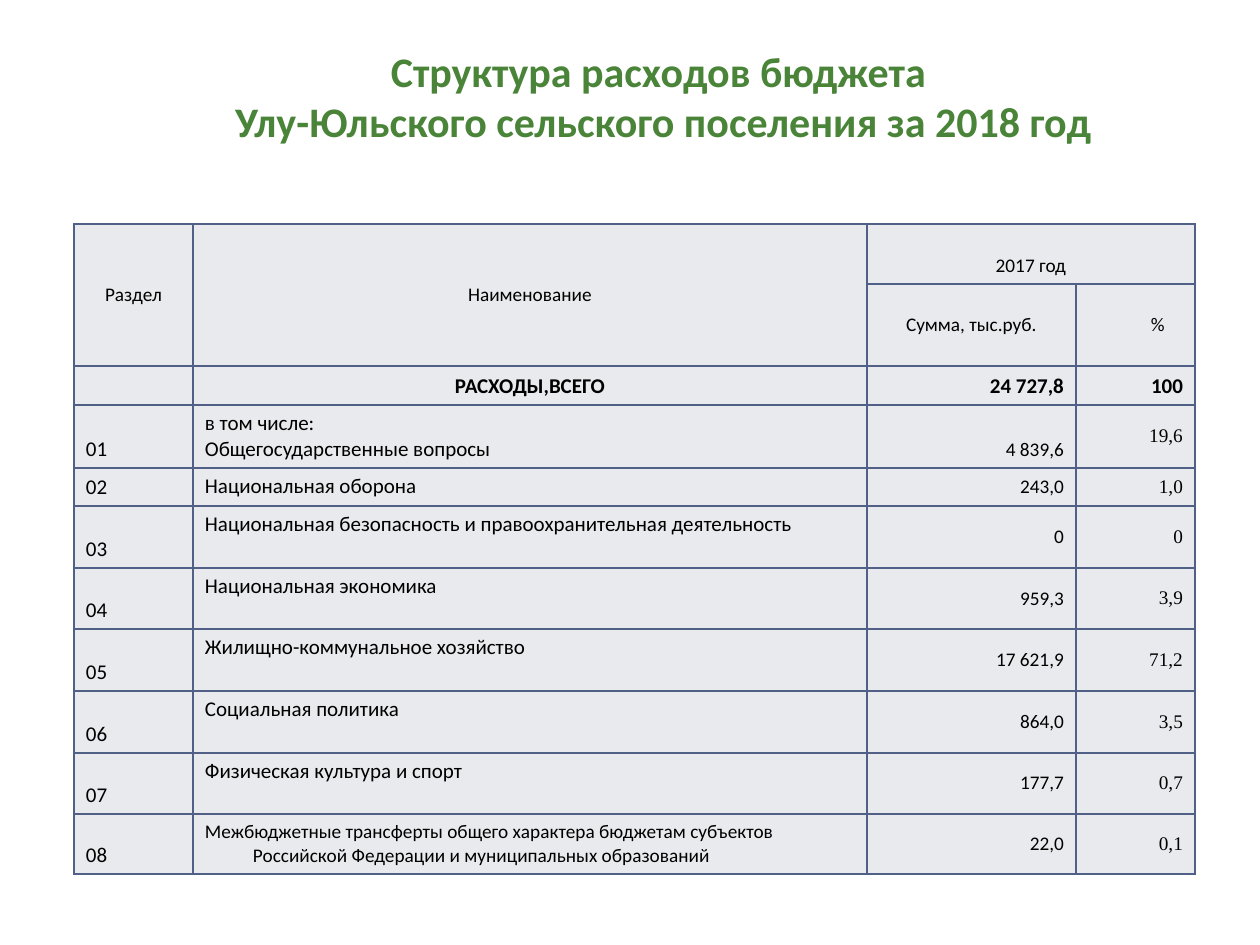
import pptx
import pptx.util
import pptx.dml.color
import pptx.enum.text
import pptx.oxml.ns
from lxml import etree

PX = 914400 // 126
GREEN = pptx.dml.color.RGBColor(0x4A, 0x84, 0x39)
BLACK = pptx.dml.color.RGBColor(0x00, 0x00, 0x00)
CELL_FILL = pptx.dml.color.RGBColor(0xE9, 0xEA, 0xED)
BORDER = pptx.dml.color.RGBColor(0x51, 0x60, 0x86)
SANS, SERIF = "Calibri", "Times New Roman"
INDENT = 48

qn = pptx.oxml.ns.qn
LEFT, CENTER, RIGHT = (pptx.enum.text.PP_ALIGN.LEFT, pptx.enum.text.PP_ALIGN.CENTER,
                       pptx.enum.text.PP_ALIGN.RIGHT)
TOP, MIDDLE, BOTTOM = (pptx.enum.text.MSO_ANCHOR.TOP, pptx.enum.text.MSO_ANCHOR.MIDDLE,
                       pptx.enum.text.MSO_ANCHOR.BOTTOM)


def style_cell(cell):
    """Fill the cell and draw its four borders."""
    cell.margin_left = cell.margin_right = 12 * PX
    cell.margin_top = cell.margin_bottom = 6 * PX
    properties = cell._tc.get_or_add_tcPr()
    for side in ("a:lnL", "a:lnR", "a:lnT", "a:lnB"):
        line = etree.SubElement(properties, qn(side), w=str(pptx.util.Pt(1)))
        solid = etree.SubElement(line, qn("a:solidFill"))
        etree.SubElement(solid, qn("a:srgbClr"), val=str(BORDER))
    cell.fill.solid()
    cell.fill.fore_color.rgb = CELL_FILL


def write_cell(cell, lines, align, anchor, size=11, font=SANS, bold=False, left=INDENT):
    """Write each line as a paragraph with a hanging indent."""
    cell.vertical_anchor = anchor
    for index, words in enumerate(lines):
        frame = cell.text_frame
        paragraph = frame.paragraphs[0] if index == 0 else frame.add_paragraph()
        paragraph.alignment = align
        indents = paragraph._p.get_or_add_pPr()
        indents.set("marL", str(left * PX))
        indents.set("indent", str(-INDENT * PX))
        run = paragraph.add_run()
        run.text = words
        run.font.name = font
        run.font.size = pptx.util.Pt(size)
        run.font.bold = bold
        run.font.color.rgb = BLACK


deck = pptx.Presentation()
deck.slide_width, deck.slide_height = 1260 * PX, 945 * PX
slide = deck.slides.add_slide(deck.slide_layouts[5])

# Title
title = slide.shapes.title
title.left, title.top, title.width, title.height = 123 * PX, 35 * PX, 1071 * PX, 157 * PX
title.text_frame.word_wrap = True
title.text_frame.vertical_anchor = TOP
title.text_frame.margin_top = 10 * PX
heading = title.text_frame.paragraphs[0]
heading.alignment = CENTER
for index, words in enumerate(["Структура расходов бюджета",
                               " Улу-Юльского сельского поселения за 2018 год"]):
    if index:
        heading.add_line_break()
    run = heading.add_run()
    run.text = words
    run.font.name = SANS
    run.font.size = pptx.util.Pt(24)
    run.font.bold = True
    run.font.color.rgb = GREEN

# Table grid
column_widths = [119, 674, 209, 119]
row_heights = [60, 82, 39, 63, 38, 62, 61, 62, 62, 61, 60]
expenses = slide.shapes.add_table(
    len(row_heights), len(column_widths), 74 * PX, 224 * PX,
    sum(column_widths) * PX, sum(row_heights) * PX).table
expenses.first_row = expenses.horz_banding = False
for column, width in zip(expenses.columns, column_widths):
    column.width = width * PX
for row, height in zip(expenses.rows, row_heights):
    row.height = height * PX
for cell in expenses.iter_cells():
    style_cell(cell)

# Header
for first, last in [((0, 0), (1, 0)), ((0, 1), (1, 1)), ((0, 2), (0, 3))]:
    expenses.cell(*first).merge(expenses.cell(*last))
write_cell(expenses.cell(0, 0), ["Раздел"], CENTER, MIDDLE)
write_cell(expenses.cell(0, 1), ["Наименование"], CENTER, MIDDLE)
write_cell(expenses.cell(0, 2), ["2017 год"], CENTER, BOTTOM)
write_cell(expenses.cell(1, 2), ["Сумма, тыс.руб."], CENTER, MIDDLE)
write_cell(expenses.cell(1, 3), ["%"], LEFT, MIDDLE, left=111)

# Total row; its blank first cell needs a small font to keep the row low
blank = expenses.cell(2, 0).text_frame.paragraphs[0]
etree.SubElement(blank._p, qn("a:endParaRPr"), sz="1200")
for column, (words, align) in enumerate(
        [("РАСХОДЫ,ВСЕГО", CENTER), ("24 727,8", RIGHT), ("100", RIGHT)], start=1):
    write_cell(expenses.cell(2, column), [words], align, BOTTOM, size=12, bold=True)

# Sections: name lines, name size, sum, sum anchor, share
sections = [
    (["в том числе:", "Общегосударственные вопросы"], 12, "4 839,6", BOTTOM, "19,6"),
    (["Национальная оборона"], 12, "243,0", MIDDLE, "1,0"),
    (["Национальная безопасность и правоохранительная деятельность"], 12, "0", MIDDLE, "0"),
    (["Национальная экономика"], 12, "959,3", MIDDLE, "3,9"),
    (["Жилищно-коммунальное хозяйство"], 12, "17 621,9", MIDDLE, "71,2"),
    (["Социальная политика"], 12, "864,0", MIDDLE, "3,5"),
    (["Физическая культура и спорт"], 12, "177,7", MIDDLE, "0,7"),
    (["Межбюджетные трансферты общего характера бюджетам субъектов "
      "Российской Федерации и муниципальных образований"], 11, "22,0", MIDDLE, "0,1"),
]
for number, (name, name_size, amount, amount_anchor, share) in enumerate(sections, start=1):
    row = number + 2
    write_cell(expenses.cell(row, 0), [f"{number:02d}"], LEFT, BOTTOM, size=12)
    write_cell(expenses.cell(row, 1), name, LEFT, TOP, size=name_size)
    write_cell(expenses.cell(row, 2), [amount], RIGHT, amount_anchor)
    write_cell(expenses.cell(row, 3), [share], RIGHT, MIDDLE, font=SERIF)

deck.save("out.pptx")
